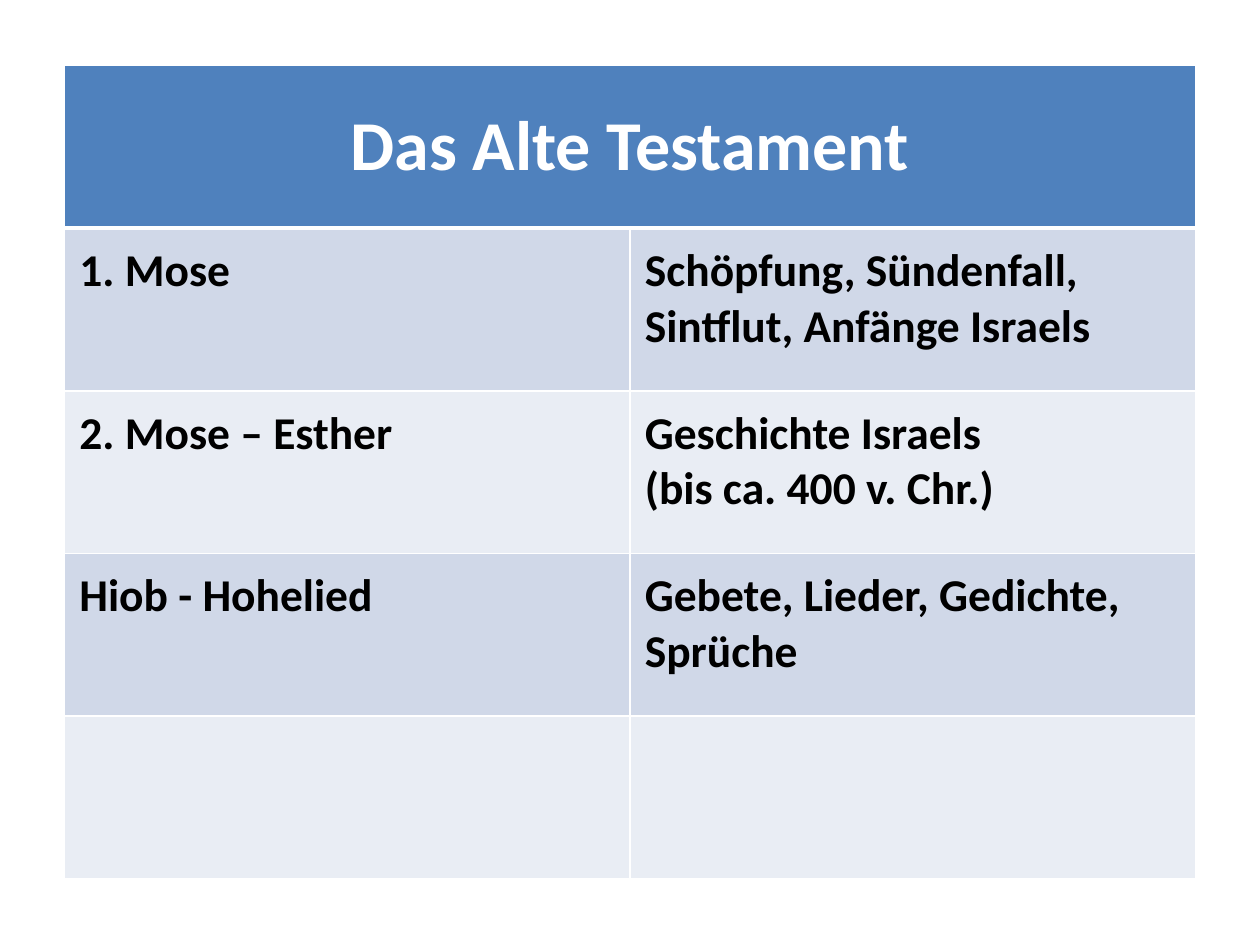
"""Build a slide with a table of the Old Testament books."""
from dataclasses import dataclass

from lxml import etree
from pptx import Presentation
from pptx.dml.color import RGBColor
from pptx.enum.text import MSO_ANCHOR, PP_ALIGN
from pptx.oxml.ns import qn
from pptx.util import Cm, Pt

MIDDLE = MSO_ANCHOR.MIDDLE
CENTER = PP_ALIGN.CENTER

TITLE = "Das Alte Testament"
BOOKS = [
    ("1. Mose", "Schöpfung, Sündenfall,\nSintflut, Anfänge Israels"),
    ("2. Mose – Esther", "Geschichte Israels\n(bis ca. 400 v. Chr.)"),
    ("Hiob - Hohelied", "Gebete, Lieder, Gedichte, Sprüche"),
    ("", ""),
]


@dataclass(frozen=True)
class Theme:
    font: str = "Calibri"
    head: str = "4F81BD"
    bands: tuple = ("D0D8E8", "E9EDF4")
    white: str = "FFFFFF"
    black: str = "000000"
    large: int = 40
    body: int = 26
    thin: int = 1
    thick: int = 3


class Deck:
    def __init__(self, theme):
        self.theme = theme
        self.prs = Presentation()
        self.prs.slide_width, self.prs.slide_height = Cm(25.4), Cm(19.05)
        self.slide = self.prs.slides.add_slide(self.prs.slide_layouts[6])

    def label(self, cell, text, size, color):
        para = cell.text_frame.paragraphs[0]
        for i, line in enumerate(text.split("\n")):
            if i:
                para.add_line_break()
            run = para.add_run()
            run.text = line
            font = run.font
            font.name, font.size, font.bold = self.theme.font, Pt(size), True
            font.color.rgb = RGBColor.from_string(color)
        return para

    def paint(self, cell, color, top, bottom):
        cell.fill.solid()
        cell.fill.fore_color.rgb = RGBColor.from_string(color)
        props = cell._tc.get_or_add_tcPr()
        thin = self.theme.thin
        sides = {"L": thin, "R": thin, "T": top, "B": bottom}
        for i, (side, width) in enumerate(sides.items()):
            line = etree.Element(qn(f"a:ln{side}"), w=str(Pt(width)))
            fill = etree.SubElement(line, qn("a:solidFill"))
            etree.SubElement(fill, qn("a:srgbClr"), val=self.theme.white)
            props.insert(i, line)

    def table(self, title, rows, left, top, width, height):
        theme = self.theme
        frame = self.slide.shapes.add_table(
            len(rows) + 1, len(rows[0]), left, top, width, height)
        grid = frame.table
        for cell in grid.rows[0].cells:
            self.paint(cell, theme.head, theme.thin, theme.thick)
        head = grid.cell(0, 0)
        head.merge(grid.cell(0, len(rows[0]) - 1))
        head.vertical_anchor = MIDDLE
        self.label(head, title, theme.large, theme.white).alignment = CENTER
        for r, row in enumerate(rows, 1):
            edge = theme.thick if r == 1 else theme.thin
            for c, text in enumerate(row):
                cell = grid.cell(r, c)
                self.paint(cell, theme.bands[(r - 1) % 2], edge, theme.thin)
                if text:
                    cell.margin_left = cell.margin_top = Cm(0.3)
                    cell.margin_right, cell.margin_bottom = Cm(0.4), Cm(0.2)
                    self.label(cell, text, theme.body, theme.black)

    def save(self):
        self.prs.save("out.pptx")


def main():
    deck = Deck(Theme())
    deck.table(TITLE, BOOKS, Cm(1.3), Cm(1.32), Cm(22.8), Cm(16.4))
    deck.save()


if __name__ == "__main__":
    main()
